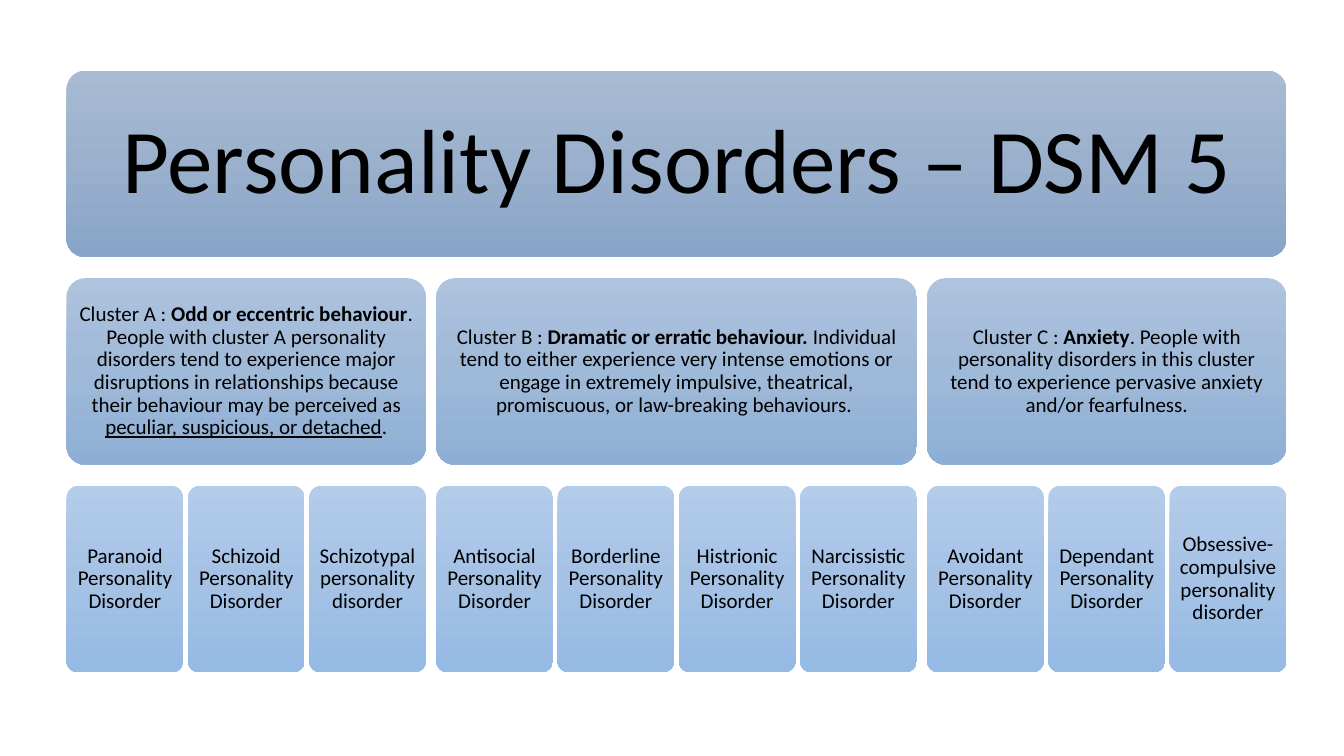
from copy import deepcopy

from pptx import Presentation
from pptx.dml.color import RGBColor
from pptx.enum.shapes import MSO_SHAPE
from pptx.enum.text import MSO_ANCHOR, MSO_AUTO_SIZE, PP_ALIGN
from pptx.oxml.ns import qn
from pptx.util import Inches, Pt

ROUNDED = MSO_SHAPE.ROUNDED_RECTANGLE
MIDDLE = MSO_ANCHOR.MIDDLE
CENTER = PP_ALIGN.CENTER
NO_AUTOFIT = MSO_AUTO_SIZE.NONE

COLORS = {
    "text": "000000",
    "banner": ("A8BBD3", "9AB0CC", "88A4C8"),
    "cluster": ("ADC3DE", "9FB9D8", "8EAFD5"),
    "disorder": ("B3CCEA", "A5C2E5", "95BAE4"),
}

LEFT, TOP, WIDTH = 0.66, 0.7, 12.1
ROW_HEIGHT, ROW_PITCH = 1.85, 2.06
CARD_WIDTH, CLUSTER_GAP = 1.16, 0.1

# Each cluster: its description as (text, style) runs, then its disorders
CLUSTERS = [
    (
        [
            ("Cluster A : ", ""),
            ("Odd or eccentric behaviour", "bold"),
            (". People with cluster A personality disorders tend to experience "
             "major disruptions in relationships because their behaviour may "
             "be perceived as ", ""),
            ("peculiar, suspicious, or detached", "underline"),
            (".", ""),
        ],
        ["Paranoid Personality Disorder", "Schizoid Personality Disorder",
         "Schizotypal personality disorder"],
    ),
    (
        [
            ("Cluster B : ", ""),
            ("Dramatic or erratic behaviour.", "bold"),
            (" Individual tend to either experience very intense emotions or "
             "engage in extremely impulsive, theatrical, promiscuous, or "
             "law-breaking behaviours. ", ""),
        ],
        ["Antisocial Personality Disorder", "Borderline Personality Disorder",
         "Histrionic Personality Disorder", "Narcissistic Personality Disorder"],
    ),
    (
        [
            ("Cluster C : ", ""),
            ("Anxiety", "bold"),
            (". People with personality disorders in this cluster tend to "
             "experience pervasive anxiety and/or fearfulness.", ""),
        ],
        ["Avoidant Personality Disorder", "Dependant Personality Disorder",
         "Obsessive-compulsive personality disorder"],
    ),
]


class SlideBuilder:
    font = "Calibri"
    body_size = 15
    title_size = 65

    def __init__(self, prs):
        self.s = prs.slides.add_slide(prs.slide_layouts[5])

    def add_text(self, shape, runs, size, inset):
        tf = shape.text_frame
        tf.word_wrap = True
        tf.auto_size = NO_AUTOFIT
        tf.vertical_anchor = MIDDLE
        tf.margin_left = tf.margin_right = Inches(inset)
        tf.margin_top = tf.margin_bottom = Inches(inset)
        p = tf.paragraphs[0]
        p.alignment = CENTER
        p.line_spacing = 0.9
        for text, style in runs:
            r = p.add_run()
            r.text = text
            r.font.name = self.font
            r.font.size = Pt(size)
            r.font.color.rgb = RGBColor.from_string(COLORS["text"])
            if style == "bold":
                r.font.bold = True
            elif style == "underline":
                r.font.underline = True

    def fill_gradient(self, shape, colors):
        """Fill from top to bottom with three evenly spaced colours."""
        shape.fill.gradient()
        shape.fill.gradient_angle = 270
        first = next(shape.element.iter(qn("a:gs")))
        first.addnext(deepcopy(first))
        for i, (stop, color) in enumerate(zip(shape.fill.gradient_stops, colors)):
            stop.position = i / 2
            stop.color.rgb = RGBColor.from_string(color)

    def box(self, row, left, width, level, runs=()):
        """Add a rounded box in the given row, coloured for its level."""
        sp = self.s.shapes.add_shape(
            ROUNDED, Inches(left), Inches(TOP + row * ROW_PITCH),
            Inches(width), Inches(ROW_HEIGHT))
        sp.adjustments[0] = 0.1
        sp.shadow.inherit = False
        sp.line.fill.background()
        self.fill_gradient(sp, COLORS[level])
        if runs:
            self.add_text(sp, runs, self.body_size, 0.06)
        return sp

    def banner_title(self, text):
        banner = self.box(0, LEFT, WIDTH, "banner")
        title = self.s.shapes.title
        title.left, title.top = Inches(LEFT + 0.06), Inches(TOP + 0.06)
        title.width, title.height = Inches(WIDTH - 0.11), Inches(ROW_HEIGHT - 0.11)
        self.add_text(title, [(text, "")], self.title_size, 0.27)
        title.element.addprevious(banner.element)  # title in front of banner


def main():
    prs = Presentation()
    prs.slide_width, prs.slide_height = Inches(13.33), Inches(7.5)
    slide = SlideBuilder(prs)
    slide.banner_title("Personality Disorders – DSM 5")

    cards = sum(len(disorders) for _, disorders in CLUSTERS)
    cluster_gaps = len(CLUSTERS) - 1
    free = WIDTH - cards * CARD_WIDTH - cluster_gaps * CLUSTER_GAP
    card_gap = free / (cards - 1 - cluster_gaps)
    pitch = CARD_WIDTH + card_gap

    left = LEFT
    for description, disorders in CLUSTERS:
        width = len(disorders) * pitch - card_gap
        slide.box(1, left, width, "cluster", description)
        for i, disorder in enumerate(disorders):
            slide.box(2, left + i * pitch, CARD_WIDTH, "disorder", [(disorder, "")])
        left += width + CLUSTER_GAP

    prs.save("out.pptx")


if __name__ == "__main__":
    main()
